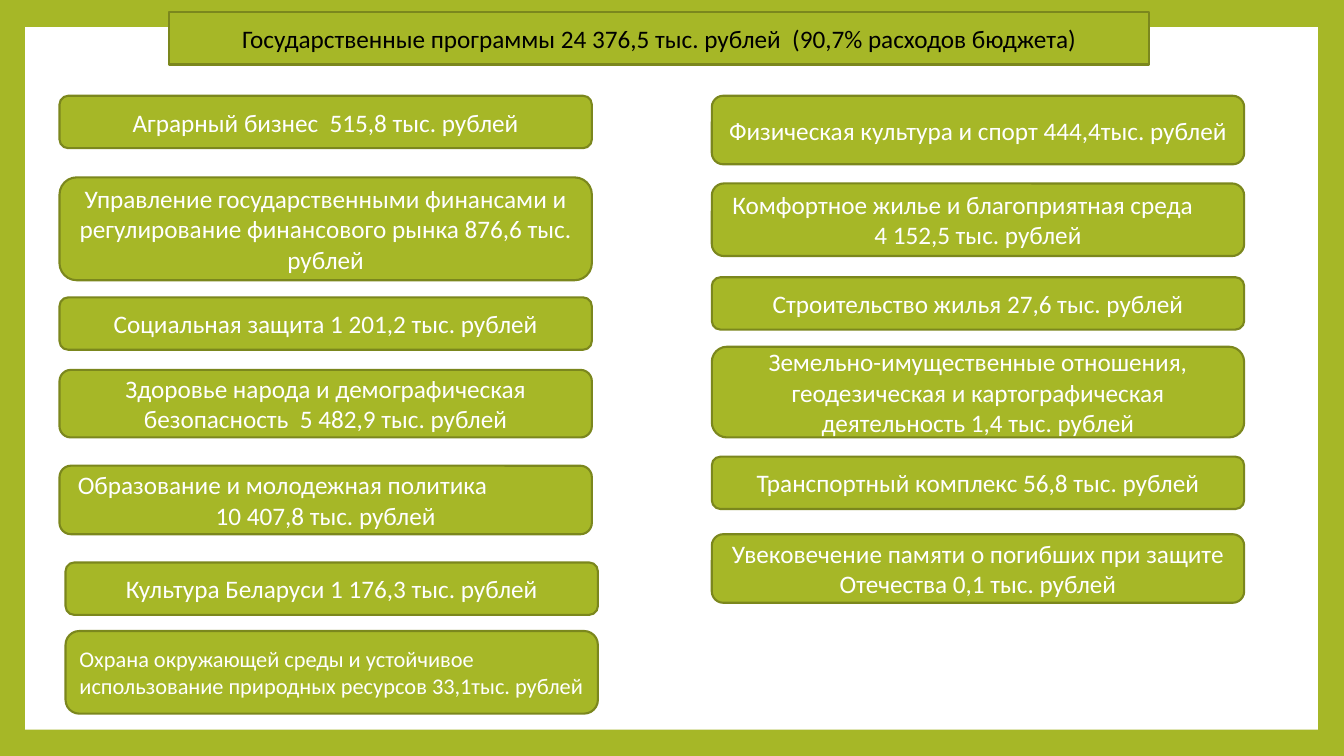
import pptx
import pptx.util
import pptx.dml.color
import pptx.enum.shapes
import pptx.enum.text
import pptx.oxml

Inches, Pt = pptx.util.Inches, pptx.util.Pt
RGBColor = pptx.dml.color.RGBColor
SHAPE = pptx.enum.shapes.MSO_SHAPE
ALIGN = pptx.enum.text.PP_ALIGN

GREEN = RGBColor(0xA6, 0xB7, 0x27)
OLIVE = RGBColor(0x7B, 0x87, 0x1D)
WHITE = RGBColor(0xFF, 0xFF, 0xFF)
BLACK = RGBColor(0, 0, 0)

FRAME = {
    "word_wrap": True,
    "auto_size": pptx.enum.text.MSO_AUTO_SIZE.NONE,
    "vertical_anchor": pptx.enum.text.MSO_ANCHOR.MIDDLE,
    "margin_left": Inches(0.1), "margin_right": Inches(0.1),
    "margin_top": Inches(0.05), "margin_bottom": Inches(0.05),
}
FONT = {"name": "Calibri", "size": Pt(18), "bold": False, "color": WHITE}
HEAD = {**FONT, "color": BLACK}
SMALL = {**FONT, "size": Pt(16)}

TITLE = "Государственные программы 24 376,5 тыс. рублей  (90,7% расходов бюджета)"
WIDE = 5.28

# Each card: top, height, text, then any format that differs
LEFT = [
    (0.95, 0.52, "Аграрный бизнес  515,8 тыс. рублей", {}),
    (1.76, 1.02, "Управление государственными финансами и регулирование "
                 "финансового рынка 876,6 тыс. рублей", {}),
    (2.95, 0.52, "Социальная защита 1 201,2 тыс. рублей", {}),
    (3.67, 0.67, "Здоровье народа и демографическая безопасность  "
                 "5 482,9 тыс. рублей", {}),
    (4.62, 0.68, "Образование и молодежная политика\n10 407,8 тыс. рублей",
     {"indent": 0.05}),
]
LOWER = [
    (5.58, 0.52, "Культура Беларуси 1 176,3 тыс. рублей", {}),
    (6.26, 0.82, "Охрана окружающей среды и устойчивое использование "
                 "природных ресурсов 33,1тыс. рублей",
     {"font": SMALL, "align": ALIGN.LEFT}),
]
RIGHT = [
    (0.95, 0.68, "Физическая культура и спорт 444,4тыс. рублей", {}),
    (1.82, 0.72, "Комфортное жилье и благоприятная среда\n4 152,5 тыс. рублей",
     {"indent": 0.07}),
    (2.75, 0.52, "Строительство жилья 27,6 тыс. рублей", {}),
    (3.44, 0.90, "Земельно-имущественные отношения, геодезическая и "
                 "картографическая деятельность 1,4 тыс. рублей", {}),
    (4.53, 0.52, "Транспортный комплекс 56,8 тыс. рублей", {}),
    (5.30, 0.68, "Увековечение памяти о погибших при защите Отечества "
                 "0,1 тыс. рублей", {}),
]


def paint(shape):
    """Give a shape the green fill and olive edge."""
    shape.fill.solid()
    shape.fill.fore_color.rgb = GREEN
    shape.line.color.rgb = OLIVE
    shape.line.width = Pt(1.5)


def write(shape, text, font=FONT, align=ALIGN.CENTER, indent=0):
    """Set the text; an indent places the first line from the left."""
    frame = shape.text_frame
    for key, value in FRAME.items():
        setattr(frame, key, value)
    frame.text = text
    for para in frame.paragraphs:
        para.alignment = align
        para.line_spacing = 1.0
        para.space_before = Pt(0)
        for key, value in font.items():
            if key == "color":
                para.runs[0].font.color.rgb = value
            else:
                setattr(para.runs[0].font, key, value)
    if indent:
        first = frame.paragraphs[0]
        first.alignment = ALIGN.LEFT
        first._p.get_or_add_pPr().set("marL", str(Inches(indent)))


def place(shape, box):
    """Move a shape to its box."""
    for key, value in zip(("left", "top", "width", "height"), box):
        setattr(shape, key, Inches(value))


def add_title(slide, box):
    """Turn the title placeholder into the rounded heading."""
    title = slide.shapes.title
    place(title, box)
    title.element.spPr.insert(1, pptx.oxml.parse_xml(
        '<a:prstGeom xmlns:a="http://schemas.openxmlformats.org/drawingml/2006/main"'
        ' prst="roundRect"><a:avLst/></a:prstGeom>'))
    paint(title)
    write(title, TITLE, HEAD)


def add_panel(slide, box):
    """Lay the white panel behind the title."""
    panel = slide.shapes.add_shape(SHAPE.RECTANGLE, *map(Inches, box))
    panel.shadow.inherit = False
    panel.fill.solid()
    panel.fill.fore_color.rgb = WHITE
    panel.line.fill.background()
    slide.shapes.title.element.addprevious(panel.element)


def add_cards(slide, left, width, cards):
    """Stack the programme cards of one column."""
    for top, height, text, style in cards:
        card = slide.shapes.add_shape(
            SHAPE.ROUNDED_RECTANGLE, *map(Inches, (left, top, width, height)))
        card.shadow.inherit = False
        paint(card)
        write(card, text, **style)


def main():
    deck = pptx.Presentation()
    deck.slide_width, deck.slide_height = Inches(13.33), Inches(7.5)
    slide = deck.slides.add_slide(deck.slide_layouts[5])
    slide.background.fill.solid()
    slide.background.fill.fore_color.rgb = GREEN

    # Frame and heading
    add_panel(slide, (0.25, 0.27, 12.82, 6.97))
    add_title(slide, (1.68, 0.12, 9.72, 0.52))

    # Columns of programmes
    for left, cards in ((0.59, LEFT), (0.65, LOWER), (7.06, RIGHT)):
        add_cards(slide, left, WIDE, cards)

    deck.save("out.pptx")


if __name__ == "__main__":
    main()
